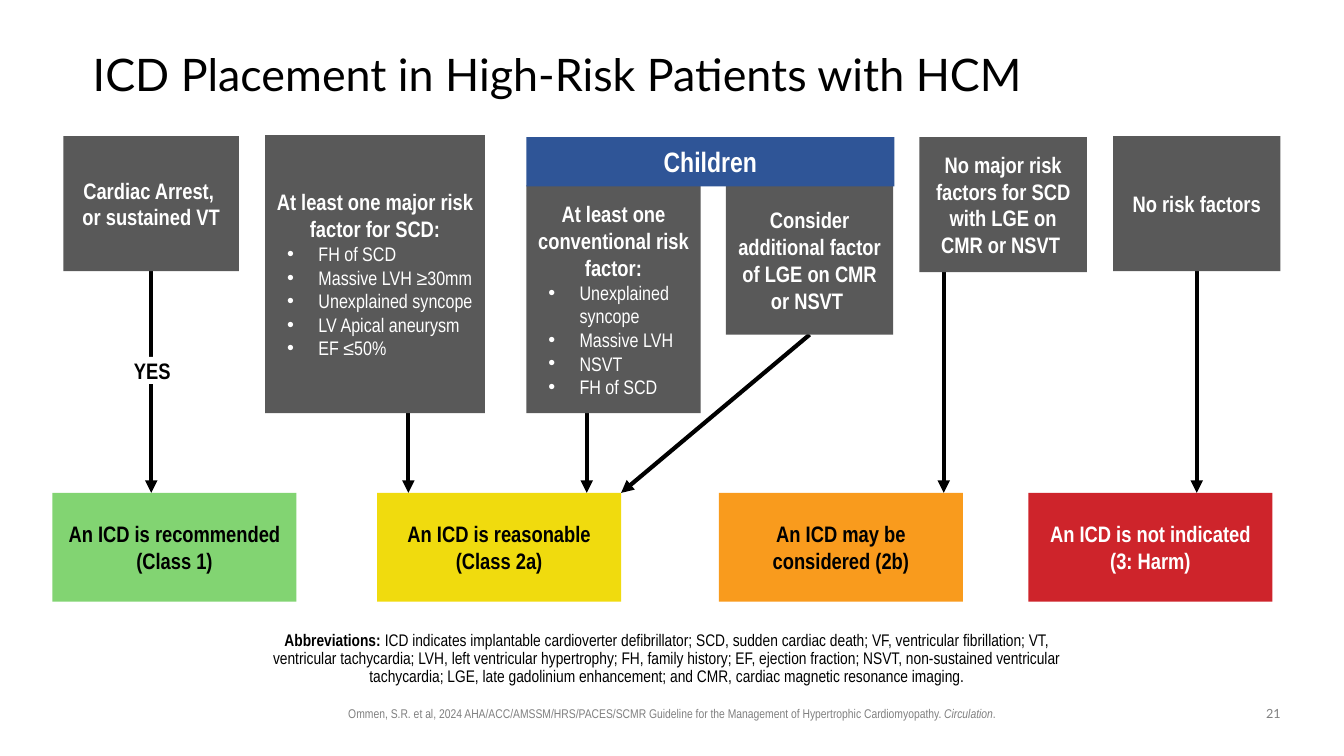
from pptx import Presentation
from pptx.dml.color import RGBColor
from pptx.enum.shapes import MSO_CONNECTOR, MSO_SHAPE
from pptx.enum.text import MSO_ANCHOR, PP_ALIGN
from pptx.oxml.ns import qn
from pptx.util import Inches, Pt
from lxml.etree import SubElement

COLORS = {
    "black": "000000", "white": "FFFFFF", "footer": "808080",
    "factor": "595959", "children": "2F5597", "green": "82D472",
    "yellow": "F0DB0E", "orange": "F99B1D", "red": "CE242B",
}


def color(name):
    return RGBColor.from_string(COLORS[name])


class FlowPage:
    narrow = "Arial Narrow"
    heading = "Lato"

    def __init__(self, deck):
        self.shapes = deck.slides.add_slide(deck.slide_layouts[6]).shapes

    def frame(self, box, anchor, margins):
        frame = box.text_frame
        values = {
            "word_wrap": True, "vertical_anchor": anchor,
            "margin_left": Inches(margins[0]), "margin_top": Inches(margins[1]),
            "margin_right": Inches(margins[2]), "margin_bottom": Inches(margins[3]),
        }
        for name, value in values.items():
            setattr(frame, name, value)
        return frame

    def span(self, para, words, size, ink, font=narrow, bold=False, italic=False):
        for index, line in enumerate(words.split("\n")):
            if index:
                para.add_line_break()
            span = para.add_run()
            span.text = line
            values = {"size": Pt(size), "name": font, "bold": bold, "italic": italic}
            for name, value in values.items():
                setattr(span.font, name, value)
            span.font.color.rgb = color(ink)

    def bullet(self, frame, words, ink):
        para = frame.add_paragraph()
        properties = para._p.get_or_add_pPr()
        properties.set("marL", str(Inches(0.43)))
        properties.set("indent", str(Inches(-0.31)))
        SubElement(properties, qn("a:buFont")).set("typeface", "Arial")
        SubElement(properties, qn("a:buChar")).set("char", "•")
        para.alignment = PP_ALIGN.LEFT
        self.span(para, words, 14, ink)

    def text(self, place, spans, align=PP_ALIGN.CENTER, anchor=MSO_ANCHOR.TOP,
             margins=(0.1, 0.05, 0.1, 0.05), spacing=1.0):
        box = self.shapes.add_textbox(*map(Inches, place))
        para = self.frame(box, anchor, margins).paragraphs[0]
        para.alignment = align
        para.line_spacing = spacing
        for words, values in spans:
            self.span(para, words, **values)

    def block(self, place, words, fill, ink="white", bullets=(), size=16,
              anchor=MSO_ANCHOR.MIDDLE, margins=(0.1, 0.05, 0.1, 0.05)):
        box = self.shapes.add_shape(MSO_SHAPE.RECTANGLE, *map(Inches, place))
        box.shadow.inherit = False
        box.fill.solid()
        box.fill.fore_color.rgb = color(fill)
        box.line.fill.background()
        frame = self.frame(box, anchor, margins)
        para = frame.paragraphs[0]
        para.alignment = PP_ALIGN.CENTER
        self.span(para, words, size, ink, bold=True)
        for item in bullets:
            self.bullet(frame, item, ink)

    def arrow(self, start, end):
        line = self.shapes.add_connector(MSO_CONNECTOR.STRAIGHT, *map(Inches, start + end))
        line.line.width = Pt(3)
        line.line.color.rgb = color("black")
        SubElement(line.line._get_or_add_ln(), qn("a:tailEnd")).set("type", "triangle")
        SubElement(line._element.spPr, qn("a:effectLst"))


def main():
    deck = Presentation()
    deck.slide_width, deck.slide_height = Inches(13.33), Inches(7.5)
    page = FlowPage(deck)
    outcome_top = 4.89

    page.text((0.92, 0.4, 11.5, 0.72),
              [("ICD Placement in High-Risk Patients with HCM",
                {"size": 32, "ink": "black", "font": page.heading})],
              PP_ALIGN.LEFT, MSO_ANCHOR.MIDDLE, (0, 0, 0, 0), 0.9)

    for start_x, start_y, end_x in [
        (1.5, 2.69, 1.5), (4.05, 3.99, 4.05), (5.82, 3.99, 5.82),
        (8.03, 3.32, 6.16), (9.36, 2.69, 9.36), (11.87, 2.69, 11.87),
    ]:
        page.arrow((start_x, start_y), (end_x, outcome_top))

    for place, words, bullets in [
        ((0.63, 1.35, 1.74, 1.34), "Cardiac Arrest, \nor sustained VT", ()),
        ((2.63, 1.34, 2.18, 2.76), "At least one major risk factor for SCD:",
         ("FH of SCD", "Massive LVH ≥30mm", "Unexplained syncope",
          "LV Apical aneurysm", "EF ≤50%")),
        ((5.22, 1.84, 1.73, 2.26), "At least one conventional risk factor:",
         ("Unexplained syncope", "Massive LVH", "NSVT", "FH of SCD")),
        ((7.2, 1.84, 1.66, 1.48), "Consider additional factor of LGE on CMR or NSVT ", ()),
        ((9.12, 1.36, 1.66, 1.34),
         "No major risk factors for SCD with LGE on CMR or NSVT ", ()),
        ((11.04, 1.35, 1.66, 1.34), "No risk factors", ()),
    ]:
        page.block(place, words, "factor", bullets=bullets)

    page.block((5.22, 1.36, 3.65, 0.49), "Children", "children", size=20,
               margins=(0, 0, 0, 0))
    page.block((1.31, 3.54, 0.4, 0.27), "YES", "white", "black",
               anchor=MSO_ANCHOR.TOP, margins=(0, 0, 0, 0))

    for left, words, fill, ink in [
        (0.52, "An ICD is recommended (Class 1)", "green", "black"),
        (3.74, "An ICD is reasonable (Class 2a)", "yellow", "black"),
        (7.13, "An ICD may be considered (2b)", "orange", "black"),
        (10.2, "An ICD is not indicated (3: Harm)", "red", "white"),
    ]:
        page.block((left, outcome_top, 2.42, 1.08), words, fill, ink)

    note = {"size": 12, "ink": "black"}
    page.text((2.53, 6.22, 8.27, 0.4), [
        ("Abbreviations: ", {**note, "bold": True}),
        ("ICD indicates implantable cardioverter defibrillator; SCD, sudden cardiac "
         "death; VF, ventricular fibrillation; VT, ventricular tachycardia; LVH, left "
         "ventricular hypertrophy; FH, family history; EF, ejection fraction; NSVT, "
         "non-sustained ventricular tachycardia; LGE, late gadolinium enhancement; "
         "and CMR, cardiac magnetic resonance imaging.", note),
    ], margins=(0, 0.05, 0.1, 0.05), spacing=0.9)

    footer = {"size": 9, "ink": "footer"}
    page.text((2.94, 6.95, 7.45, 0.25), [
        ("Ommen, S.R. et al, 2024 AHA/ACC/AMSSM/HRS/PACES/SCMR Guideline for the "
         "Management of Hypertrophic Cardiomyopathy. ", footer),
        ("Circulation", {**footer, "italic": True}),
        (".", footer),
    ])
    page.text((12.42, 6.95, 0.42, 0.26), [("21", {**footer, "font": page.heading})])
    deck.save("out.pptx")


if __name__ == "__main__":
    main()
